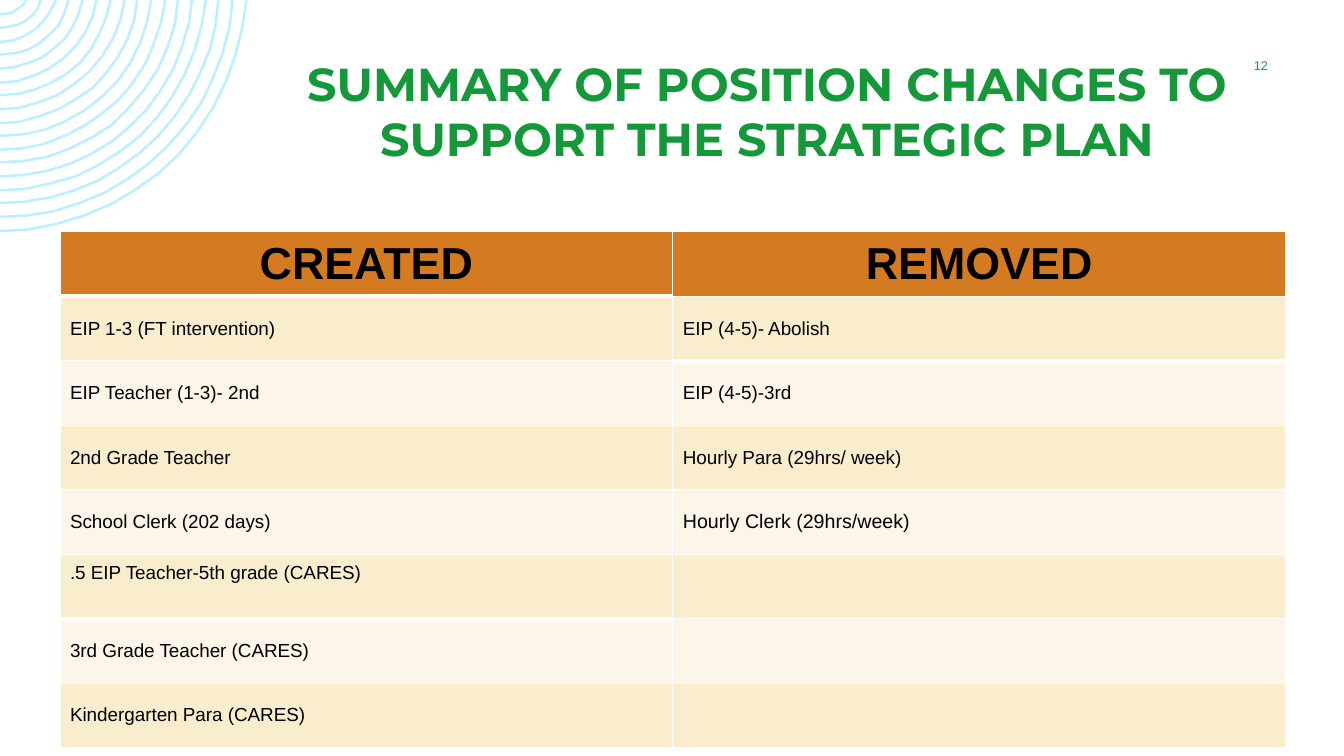
from dataclasses import dataclass
from math import asin, cos, pi, sin, sqrt

from lxml.etree import SubElement
from pptx import Presentation
from pptx.dml.color import RGBColor
from pptx.enum.text import MSO_ANCHOR, PP_ALIGN
from pptx.oxml.ns import qn
from pptx.slide import Slide
from pptx.table import _Cell
from pptx.util import Pt

WHITE = RGBColor(0xFF, 0xFF, 0xFF)
BLACK = RGBColor(0x00, 0x00, 0x00)
GREEN = RGBColor(0x15, 0x98, 0x39)
ORANGE = RGBColor(0xD4, 0x7B, 0x22)
CREAM = RGBColor(0xFA, 0xED, 0xCE)
PALE_CREAM = RGBColor(0xFD, 0xF6, 0xE8)
LIGHT_BLUE = RGBColor(0xBA, 0xF0, 0xFF)

ROW_HEIGHT = 46.08
COLUMN_WIDTH = 437.76
POSITION_CHANGES = [
    ("CREATED", "REMOVED"),
    ("EIP 1-3 (FT intervention)", "EIP (4-5)- Abolish"),
    ("EIP Teacher (1-3)- 2nd", "EIP (4-5)-3rd"),
    ("2nd Grade Teacher", "Hourly Para (29hrs/ week)"),
    ("School Clerk (202 days)", "Hourly Clerk (29hrs/week)"),
    (".5 EIP Teacher-5th grade (CARES)", ""),
    ("3rd Grade Teacher (CARES)", ""),
    ("Kindergarten Para (CARES)", ""),
]
THICK_BELOW = {(0, 0), (1, 1), (5, 0)}
TOP_ALIGNED = (5, 0)
LARGER_TEXT = (4, 1)


@dataclass
class Label:
    text: str
    left: float
    top: float
    width: float
    height: float
    size: float
    font: str
    bold: bool
    anchor: MSO_ANCHOR


LABELS = [
    Label("SUMMARY OF POSITION CHANGES TO SUPPORT THE STRATEGIC PLAN",
          177.12, 36, 741.6, 105.84, 33, "Montserrat", True, MSO_ANCHOR.TOP),
    Label("12", 861.84, 36, 77.76, 21.6, 9, "Arial", False, MSO_ANCHOR.MIDDLE),
]


def format_text(paragraph, size: float, font: str, bold: bool, color: RGBColor) -> None:
    for run in paragraph.runs:
        run.font.size = Pt(size)
        run.font.name = font
        run.font.bold = bold
        run.font.color.rgb = color


def add_label(slide: Slide, label: Label) -> None:
    shape = slide.shapes.add_textbox(
        Pt(label.left), Pt(label.top), Pt(label.width), Pt(label.height))
    text_frame = shape.text_frame
    text_frame.word_wrap = True
    text_frame.vertical_anchor = label.anchor
    text_frame.text = label.text
    paragraph = text_frame.paragraphs[0]
    paragraph.alignment = PP_ALIGN.CENTER
    format_text(paragraph, label.size, label.font, label.bold, GREEN)


def arc_points(radius: float, center_y: float) -> list[tuple[float, float]]:
    """Points from the slide's top edge round to its left edge."""
    steps = round(sqrt(radius))
    start = asin(-center_y / radius)
    angles = [start + (pi / 2 - start) * step / steps for step in range(steps + 1)]
    return [(radius * cos(angle), center_y + radius * sin(angle)) for angle in angles]


def add_corner_rings(slide: Slide) -> None:
    center_y, outer_radius, spacing, thickness, count = -11.4, 176.1, 9.64, 1.8, 17
    arcs = [arc_points(outer_radius - index * spacing, center_y) for index in range(count)]
    builder = slide.shapes.build_freeform(*arcs[0][0], scale=Pt(1))
    for arc in arcs:
        builder.move_to(*arc[0])
        builder.add_line_segments(arc[1:], close=False)
    shape = builder.convert_to_shape()
    shape.shadow.inherit = False
    shape.fill.background()
    shape.line.color.rgb = LIGHT_BLUE
    shape.line.width = Pt(thickness)


def set_borders(cell: _Cell, top: float, bottom: float) -> None:
    properties = cell._tc.get_or_add_tcPr()
    for side, width in (("L", 1), ("R", 1), ("T", top), ("B", bottom)):
        line = SubElement(properties, qn(f"a:ln{side}"), w=str(Pt(width)))
        fill = SubElement(line, qn("a:solidFill"))
        SubElement(fill, qn("a:srgbClr"), val=str(WHITE))


def fill_cell(cell: _Cell, row: int, column: int, text: str) -> None:
    header = row == 0
    set_borders(cell,
                top=3 if (row - 1, column) in THICK_BELOW else 1,
                bottom=3 if (row, column) in THICK_BELOW else 1)
    cell.fill.solid()
    cell.fill.fore_color.rgb = ORANGE if header else CREAM if row % 2 else PALE_CREAM
    cell.vertical_anchor = MSO_ANCHOR.MIDDLE
    if (row, column) == TOP_ALIGNED:
        cell.vertical_anchor = MSO_ANCHOR.TOP
        cell.margin_top = Pt(6)
    cell.text_frame.text = text
    paragraph = cell.text_frame.paragraphs[0]
    paragraph.alignment = PP_ALIGN.CENTER if header else PP_ALIGN.LEFT
    size = 32 if header else 14 if (row, column) == LARGER_TEXT else 13.5
    format_text(paragraph, size, "Arial", header, BLACK)


def add_position_table(slide: Slide) -> None:
    rows, columns = len(POSITION_CHANGES), len(POSITION_CHANGES[0])
    table = slide.shapes.add_table(
        rows, columns, Pt(42.84), Pt(165.6),
        Pt(columns * COLUMN_WIDTH), Pt(rows * ROW_HEIGHT)).table
    for table_column in table.columns:
        table_column.width = Pt(COLUMN_WIDTH)
    for row, texts in enumerate(POSITION_CHANGES):
        table.rows[row].height = Pt(ROW_HEIGHT)
        for column, text in enumerate(texts):
            fill_cell(table.cell(row, column), row, column, text)


def main() -> None:
    presentation = Presentation()
    presentation.slide_width = Pt(960)
    presentation.slide_height = Pt(540)
    slide = presentation.slides.add_slide(presentation.slide_layouts[6])

    # Decoration in the top left corner
    add_corner_rings(slide)
    # Title and slide number
    for label in LABELS:
        add_label(slide, label)
    # Created and removed positions
    add_position_table(slide)

    presentation.save("out.pptx")


if __name__ == "__main__":
    main()
